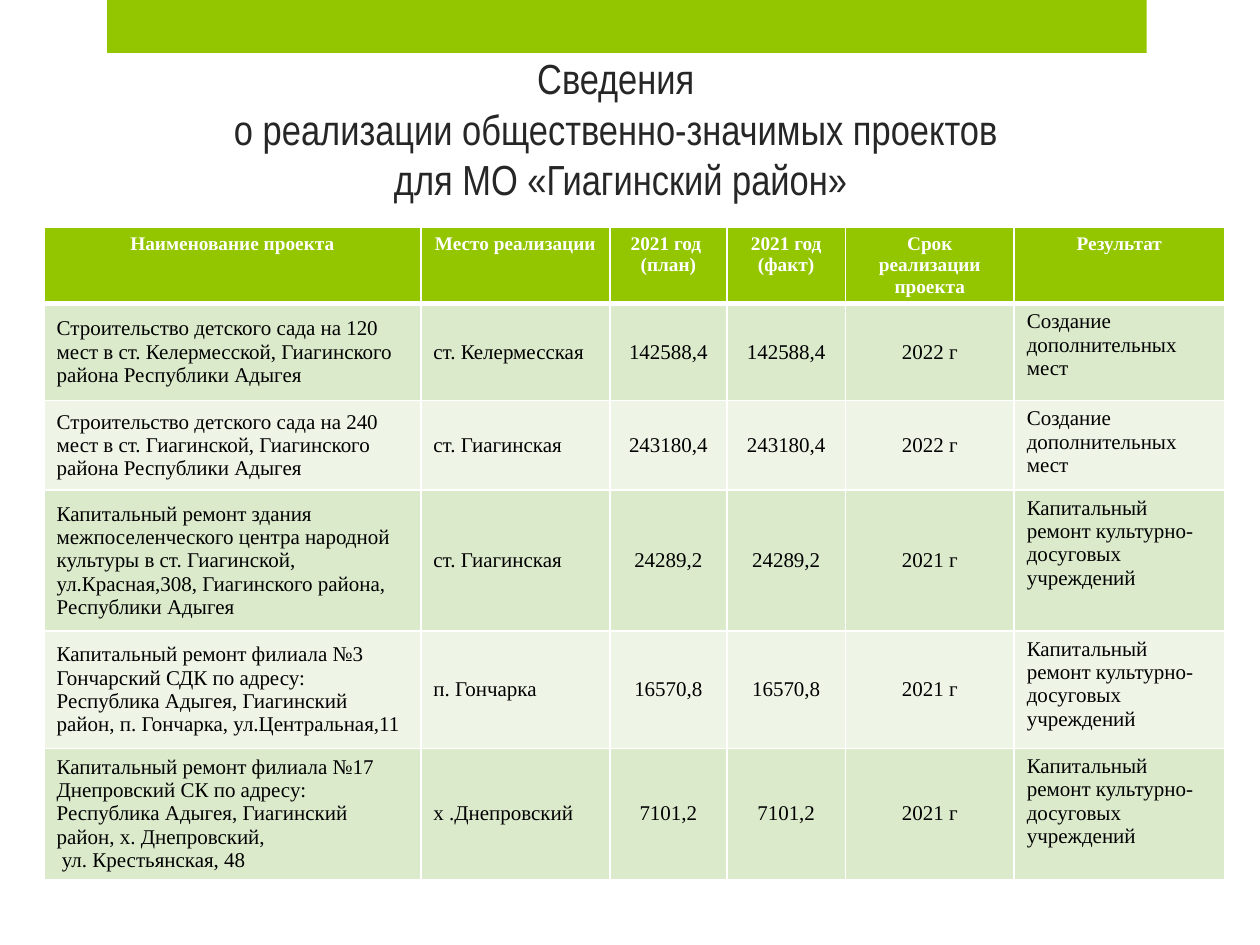
"""Builds the slide on socially significant projects of the district."""
from copy import deepcopy
from lxml import etree
from pptx import Presentation, util as u
from pptx.dml.color import RGBColor
from pptx.enum import shapes, text
from pptx.oxml.ns import qn

GREEN, WHITE = "94C600", "FFFFFF"
BANDS = ["DCEACC", "EEF5E7"]
SERIF = "Times New Roman"
LEFT, MID = text.PP_ALIGN.LEFT, text.PP_ALIGN.CENTER


def write(frame, words, size=12, font=SERIF, color="000000", bold=False, align=LEFT):
    frame.text = words
    for para in frame.paragraphs:
        para.alignment = align
        for run in para.runs:
            run.font.size, run.font.name, run.font.bold = u.Pt(size), font, bold
            run.font.color.rgb = RGBColor.from_string(color)
        for gap in para._p.findall(qn("a:br")):
            gap.append(deepcopy(para.runs[0]._r.rPr))


def edge(cell, side, width):
    line = etree.SubElement(cell._tc.get_or_add_tcPr(), qn("a:" + side), w=str(u.Pt(width)))
    fill = etree.SubElement(line, qn("a:solidFill"))
    etree.SubElement(fill, qn("a:srgbClr"), val=WHITE)


deck = Presentation()
deck.slide_width, deck.slide_height = u.Inches(10), u.Inches(7.5)
slide = deck.slides.add_slide(deck.slide_layouts[5])

bar = slide.shapes.add_shape(
    shapes.MSO_SHAPE.RECTANGLE, u.Inches(0.85), 0, u.Inches(8.25), u.Inches(0.42))
bar.shadow.inherit = False
bar.fill.solid()
bar.fill.fore_color.rgb = RGBColor.from_string(GREEN)
bar.line.fill.background()

title = slide.shapes.title
title.left, title.top = u.Inches(0.62), u.Inches(1.07)
title.width, title.height = u.Inches(8.61), u.Inches(0.6)
frame = title.text_frame
frame.word_wrap = True
frame.auto_size = text.MSO_AUTO_SIZE.NONE
frame.vertical_anchor = text.MSO_ANCHOR.BOTTOM
write(frame, "Сведения \vо реализации общественно-значимых проектов \vдля МО «Гиагинский район»",
      size=24, font="Arial Narrow", color="262626", align=MID)

places = "Создание дополнительных мест"
repair = "Капитальный ремонт культурно-досуговых учреждений"
rows = [
    ["Наименование проекта", "Место реализации", "2021 год \n(план)", "2021 год (факт)",
     "Срок реализации проекта", "Результат"],
    ["Строительство детского сада на 120 мест в ст. Келермесской, Гиагинского района "
     "Республики Адыгея", "ст. Келермесская", "142588,4", "142588,4", "2022 г", places],
    ["Строительство детского сада на 240 мест в ст. Гиагинской, Гиагинского района "
     "Республики Адыгея", "ст. Гиагинская", "243180,4", "243180,4", "2022 г", places],
    ["Капитальный ремонт здания межпоселенческого центра народной культуры в ст. Гиагинской, "
     "ул.Красная,308, Гиагинского района, Республики Адыгея",
     "ст. Гиагинская", "24289,2", "24289,2", "2021 г", repair],
    ["Капитальный ремонт филиала №3 Гончарский СДК по адресу: Республика Адыгея, Гиагинский "
     "район, п. Гончарка, ул.Центральная,11",
     "п. Гончарка", "16570,8", "16570,8", "2021 г", repair],
    ["Капитальный ремонт филиала №17 Днепровский СК по адресу: Республика Адыгея, Гиагинский "
     "район, х. Днепровский,\n ул. Крестьянская, 48",
     "х .Днепровский", "7101,2", "7101,2", "2021 г", repair],
]
widths = [2.99, 1.5, 0.93, 0.94, 1.34, 1.67]
heights = [0.61, 0.77, 0.71, 1.12, 0.93, 1.04]

table = slide.shapes.add_table(
    len(rows), len(widths), u.Inches(0.35), u.Inches(1.8),
    u.Inches(sum(widths)), u.Inches(sum(heights))).table
for col, width in zip(table.columns, widths):
    col.width = u.Inches(width)
for row, height in zip(table.rows, heights):
    row.height = u.Inches(height)

for r, row in enumerate(rows):
    head = r == 0
    for c, words in enumerate(row):
        cell = table.cell(r, c)
        if head:
            write(cell.text_frame, words, size=11, color=WHITE, bold=True, align=MID)
        else:
            write(cell.text_frame, words, align=MID if c in (2, 3, 4) else LEFT)
        top = head or c == 5
        cell.vertical_anchor = text.MSO_ANCHOR.TOP if top else text.MSO_ANCHOR.MIDDLE
        for side in ("lnL", "lnR", "lnT", "lnB"):
            thick = (r, side) in ((0, "lnB"), (1, "lnT"))
            edge(cell, side, 3 if thick else 1)
        cell.fill.solid()
        cell.fill.fore_color.rgb = RGBColor.from_string(GREEN if head else BANDS[(r - 1) % 2])

deck.save("out.pptx")
